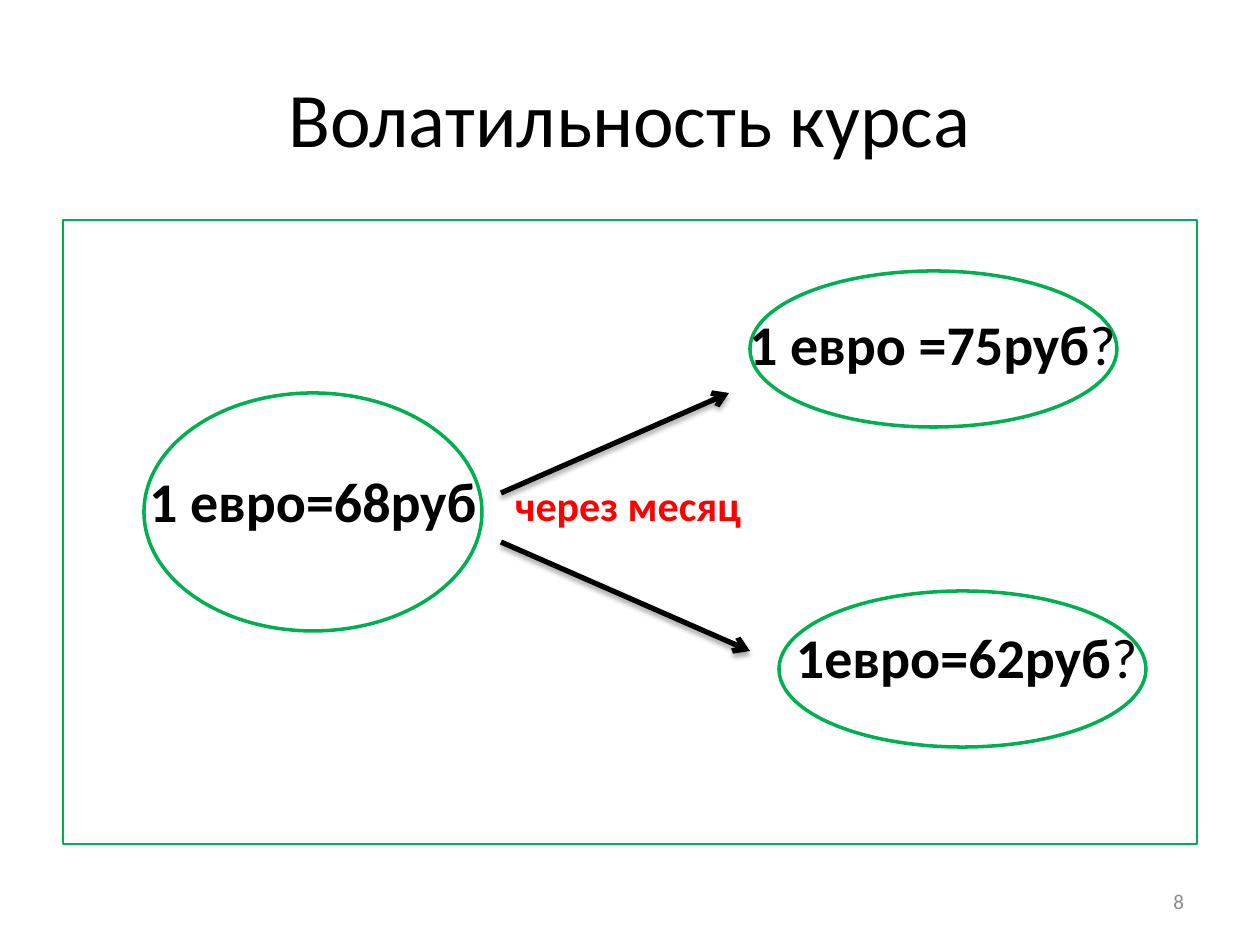
import pptx
import pptx.util
import pptx.dml.color
import pptx.enum.shapes
import pptx.enum.text
import pptx.oxml
import pptx.oxml.ns

PX = 914400 / 126
THEME = {
    "font": "Calibri",
    "ink": "000000", "green": "00B050", "red": "FF0000", "grey": "8C8C8C",
    "title": 44, "rate": 32, "period": 24, "number": 12,
    "frame_line": 0.75, "oval_line": 2, "arrow_line": 3,
}
SHADOW = """<a:effectLst %s><a:outerShdw blurRad="39370" dist="22860" dir="5400000" rotWithShape="0">
<a:srgbClr val="000000"><a:alpha val="35000"/></a:srgbClr></a:outerShdw></a:effectLst>""" % pptx.oxml.ns.nsdecls("a")
ARROWHEAD = '<a:tailEnd %s type="arrow"/>' % pptx.oxml.ns.nsdecls("a")


def emu(*lengths):
    return [pptx.util.Emu(round(length * PX)) for length in lengths]


def color(name):
    return pptx.dml.color.RGBColor.from_string(THEME[name])


deck = pptx.Presentation()
deck.slide_width, deck.slide_height = emu(1260, 945)
page = deck.slides.add_slide(deck.slide_layouts[6])
shape_types = pptx.enum.shapes.MSO_SHAPE
align = pptx.enum.text.PP_ALIGN

outlines = [
    (shape_types.RECTANGLE, (63, 220, 1134, 624), "frame_line"),
    (shape_types.OVAL, (144, 393, 338, 238), "oval_line"),
    (shape_types.OVAL, (779, 591, 367, 156), "oval_line"),
    (shape_types.OVAL, (750, 271, 367, 156), "oval_line"),
]
for kind, area, weight in outlines:
    outline = page.shapes.add_shape(kind, *emu(*area))
    outline.shadow.inherit = False
    outline.fill.background()
    outline.line.color.rgb = color("green")
    outline.line.width = pptx.util.Pt(THEME[weight])

labels = [
    ((63, 38, 1134, 157), align.CENTER, "title", "ink", [("Волатильность курса", False)]),
    ((749, 309, 370, 68), align.LEFT, "rate", "ink", [("1 евро =75руб", True), ("?", False)]),
    ((149, 466, 335, 68), align.LEFT, "rate", "ink", [("1 евро=68руб", True)]),
    ((515, 479, 232, 51), align.LEFT, "period", "red", [("через месяц", True)]),
    ((796, 622, 345, 68), align.LEFT, "rate", "ink", [("1евро=62руб", True), ("?", False)]),
    ((903, 876, 281, 50), align.RIGHT, "number", "grey", [("8", False)]),
]
for area, alignment, size, ink, spans in labels:
    box = page.shapes.add_textbox(*emu(*area))
    frame_format = {
        "word_wrap": size == "title",
        "vertical_anchor": pptx.enum.text.MSO_ANCHOR.MIDDLE,
        "margin_left": 0, "margin_right": 0, "margin_top": 0, "margin_bottom": 0,
    }
    for name, value in frame_format.items():
        setattr(box.text_frame, name, value)
    para = box.text_frame.paragraphs[0]
    para.alignment = alignment
    for text, bold in spans:
        span = para.add_run()
        span.text = text
        font_format = {"name": THEME["font"], "size": pptx.util.Pt(THEME[size]), "bold": bold}
        for name, value in font_format.items():
            setattr(span.font, name, value)
        span.font.color.rgb = color(ink)

for ends in [(501, 493, 729, 393), (501, 542, 750, 651)]:
    arrow = page.shapes.add_connector(pptx.enum.shapes.MSO_CONNECTOR.STRAIGHT, *emu(*ends))
    arrow.line.color.rgb = color("ink")
    arrow.line.width = pptx.util.Pt(THEME["arrow_line"])
    arrow.line._get_or_add_ln().append(pptx.oxml.parse_xml(ARROWHEAD))
    arrow._element.spPr.append(pptx.oxml.parse_xml(SHADOW))

deck.save("out.pptx")
